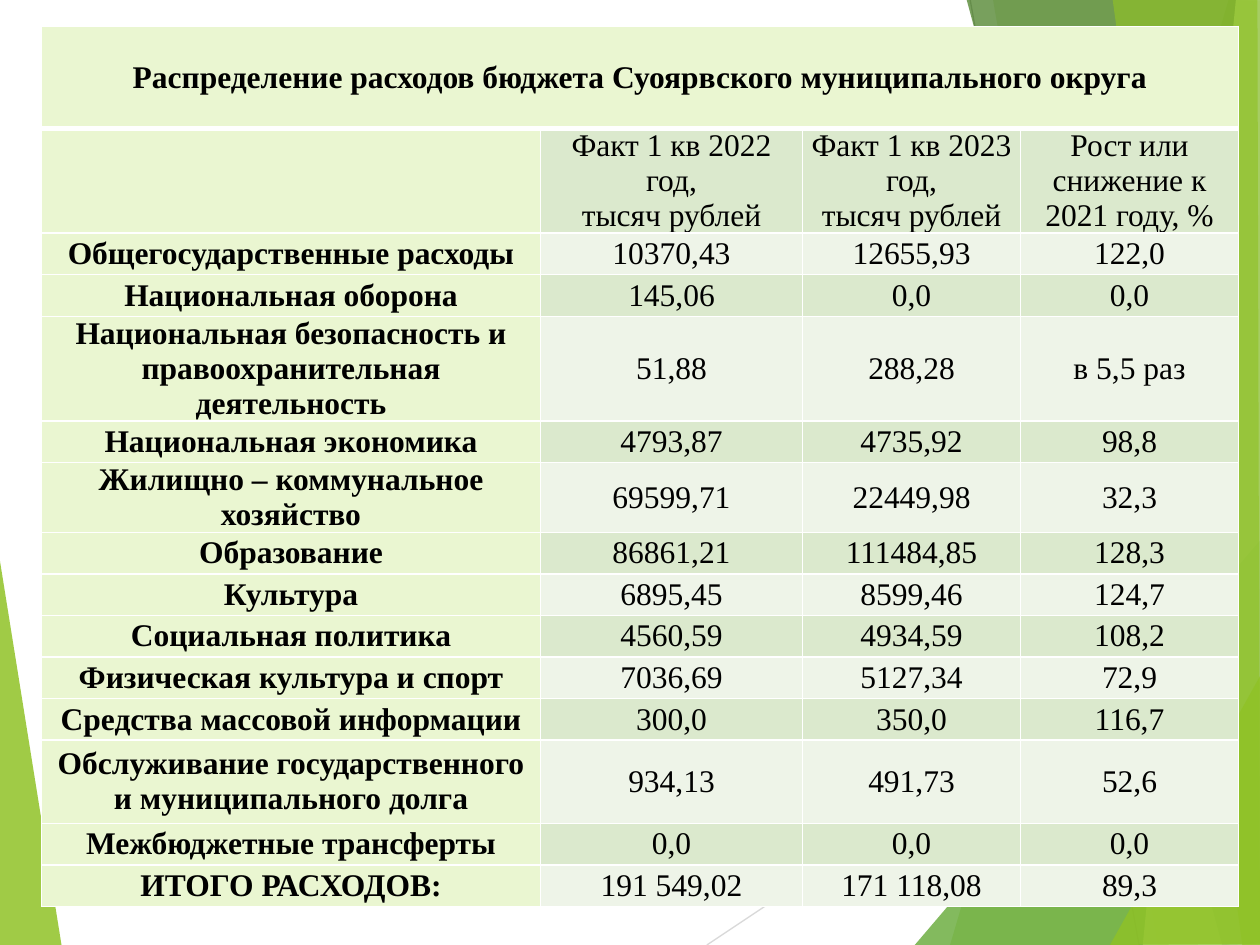
from lxml.etree import SubElement
from pptx import Presentation
from pptx.dml.color import RGBColor
from pptx.enum.shapes import MSO_CONNECTOR
from pptx.enum.text import MSO_ANCHOR, PP_ALIGN
from pptx.oxml import parse_xml
from pptx.oxml.ns import nsdecls, qn
from pptx.util import Inches, Pt

# Background facets: colour, opacity in percent, corner points
FACETS_BACK = [("90C226", 85, [(-0.01, 4.39), (0.49, 7.51), (-0.01, 7.5)])]
FACETS_FRONT = [
    ("90C226", 30, [(9.75, 0), (7.54, 7.5), (10.02, 7.51), (10.01, 0.01)]),
    ("90C226", 20, [(7.88, -0.01), (9.19, 7.5), (10.01, 7.5), (10.01, -0.01)]),
    ("54A021", 72, [(7.26, 7.5), (10, 4.29), (10.01, 7.5)]),
    ("3F7819", 70, [(7.67, -0.01), (9.7, 7.5), (10.01, 7.49), (10.01, -0.01)]),
    ("C0E474", 70, [(9.81, -0.01), (9.07, 7.5), (10.01, 7.5), (10, -0.01)]),
    ("90C226", 65, [(8.83, -0.01), (9.86, 7.5), (10, 7.5), (9.98, -0.01)]),
    ("90C226", 80, [(8.81, 7.5), (10.01, 5.35), (10.01, 7.49)]),
]
LINES = [("D9D9D9", (5.61, 7.5), (10.01, 4.57)), ("BFBFBF", (7.7, 0), (9.04, 7.5))]

TITLE = "Распределение расходов бюджета Суоярвского муниципального округа"
COLUMN_WIDTHS = [3.96, 2.08, 1.73, 1.73]
TITLE_HEIGHT, ROW_HEIGHT = 0.81, 0.33
DOUBLE_ROWS = {1, 4, 12}
ROWS = [
    ("", "Факт 1 кв 2022 год,\nтысяч рублей", "Факт 1 кв 2023 год,\nтысяч рублей",
     "Рост или снижение к 2021 году, %"),
    ("Общегосударственные расходы", "10370,43", "12655,93", "122,0"),
    ("Национальная оборона", "145,06", "0,0", "0,0"),
    ("Национальная безопасность и правоохранительная деятельность",
     "51,88", "288,28", "в 5,5 раз"),
    ("Национальная экономика", "4793,87", "4735,92", "98,8"),
    ("Жилищно – коммунальное хозяйство", "69599,71", "22449,98", "32,3"),
    ("Образование", "86861,21", "111484,85", "128,3"),
    ("Культура", "6895,45", "8599,46", "124,7"),
    ("Социальная политика", "4560,59", "4934,59", "108,2"),
    ("Физическая культура и спорт", "7036,69", "5127,34", "72,9"),
    ("Средства массовой информации", "300,0", "350,0", "116,7"),
    ("Обслуживание государственного и муниципального долга",
     "934,13", "491,73", "52,6"),
    ("Межбюджетные трансферты", "0,0", "0,0", "0,0"),
    ("ИТОГО РАСХОДОВ:", "191 549,02", "171 118,08", "89,3"),
]


def color(value):
    return RGBColor.from_string(value)


def write(frame, text, font="Times New Roman", size=18, ink="000000", bold=False):
    for index, line in enumerate(text.split("\n")):
        para = frame.paragraphs[0] if index == 0 else frame.add_paragraph()
        para.alignment = PP_ALIGN.CENTER
        para.font.size = Pt(size)
        if line:
            span = para.add_run()
            span.text = line
            span.font.name, span.font.size = font, Pt(size)
            span.font.bold, span.font.color.rgb = bold, color(ink)


class SlideBuilder:
    label_fill = "EAF6D1"
    band_fills = ("EEF4E8", "DBE9CD")
    border = "FFFFFF"

    def __init__(self, page):
        self.page = page

    def facet(self, fill, opacity, points):
        corners = [(Inches(x), Inches(y)) for x, y in points]
        builder = self.page.shapes.build_freeform(*corners[0])
        builder.add_line_segments(corners[1:], close=True)
        shape = builder.convert_to_shape()
        shape.shadow.inherit = False
        shape.fill.solid()
        shape.fill.fore_color.rgb = color(fill)
        shape.line.fill.background()
        tint = shape.fill._xPr.find(qn("a:solidFill"))[0]
        SubElement(tint, qn("a:alpha"), val=str(opacity * 1000))

    def line(self, ink, start, end):
        ends = [Inches(value) for value in (*start, *end)]
        connector = self.page.shapes.add_connector(MSO_CONNECTOR.STRAIGHT, *ends)
        connector.line.color.rgb = color(ink)
        connector.line.width = Pt(0.75)
        SubElement(connector._element.spPr, qn("a:effectLst"))

    def cell(self, cell, text, fill, bold, edges):
        cell.margin_left = cell.margin_right = Inches(0.07)
        cell.margin_top = cell.margin_bottom = 0
        cell.vertical_anchor = MSO_ANCHOR.MIDDLE
        cell.fill.solid()
        cell.fill.fore_color.rgb = color(fill)
        write(cell.text_frame, text, bold=bold)
        properties = cell._tc.get_or_add_tcPr()
        for index, (side, width) in enumerate(edges.items()):
            properties.insert(index, parse_xml(
                f'<a:ln{side} {nsdecls("a")} w="{Pt(width)}"><a:solidFill>'
                f'<a:srgbClr val="{self.border}"/></a:solidFill></a:ln{side}>'))

    def table(self, left, top, title, rows):
        heights = [TITLE_HEIGHT] + [
            ROW_HEIGHT * (2 if number in DOUBLE_ROWS else 1)
            for number in range(1, len(rows) + 1)]
        table = self.page.shapes.add_table(
            len(heights), len(COLUMN_WIDTHS), Inches(left), Inches(top),
            Inches(sum(COLUMN_WIDTHS)), Inches(sum(heights))).table
        table.first_row = table.horz_banding = False
        for column, width in zip(table.columns, COLUMN_WIDTHS):
            column.width = Inches(width)
        for row, height in zip(table.rows, heights):
            row.height = Inches(height)

        # Title across all columns, with a heavier rule below
        table.cell(0, 0).merge(table.cell(0, len(COLUMN_WIDTHS) - 1))
        for number in range(len(COLUMN_WIDTHS)):
            self.cell(table.cell(0, number), "" if number else title,
                      self.label_fill, True, {"L": 1, "R": 1, "T": 1, "B": 3})

        # Column headings and data in alternating bands
        for number, values in enumerate(rows, start=1):
            edges = {"L": 1, "R": 1, "T": 3 if number == 1 else 1, "B": 1}
            for column, text in enumerate(values):
                fill = self.band_fills[number % 2] if column else self.label_fill
                self.cell(table.cell(number, column), text, fill, column == 0, edges)
        table.cell(1, len(COLUMN_WIDTHS) - 1).vertical_anchor = MSO_ANCHOR.TOP


def main():
    deck = Presentation()
    deck.slide_width, deck.slide_height = Inches(10), Inches(7.5)
    builder = SlideBuilder(deck.slides.add_slide(deck.slide_layouts[6]))

    # Background
    for facet in FACETS_BACK:
        builder.facet(*facet)
    for line in LINES:
        builder.line(*line)
    for facet in FACETS_FRONT:
        builder.facet(*facet)

    # Budget table
    builder.table(0.33, 0.21, TITLE, ROWS)
    deck.save("out.pptx")


if __name__ == "__main__":
    main()
